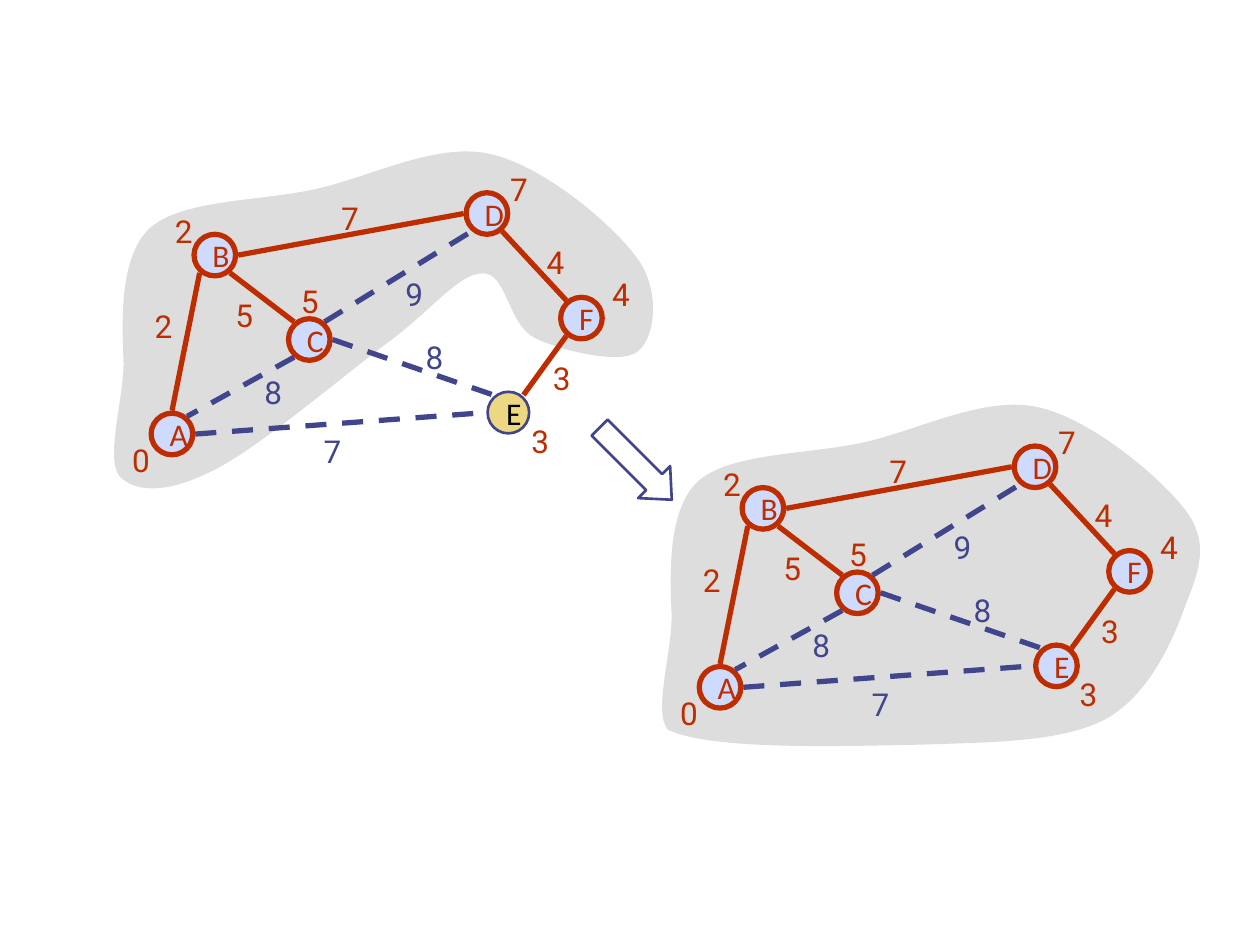
from pptx import Presentation
from pptx.dml.color import RGBColor
from pptx.enum.dml import MSO_LINE
from pptx.enum.shapes import MSO_CONNECTOR, MSO_SHAPE
from pptx.enum.text import MSO_ANCHOR, MSO_AUTO_SIZE, PP_ALIGN
from pptx.oxml.ns import qn
from pptx.util import Inches, Pt
from lxml import etree

OVAL, ARROW = MSO_SHAPE.OVAL, MSO_SHAPE.RIGHT_ARROW
STRAIGHT = MSO_CONNECTOR.STRAIGHT
DASH = MSO_LINE.DASH
MIDDLE, LEFT = MSO_ANCHOR.MIDDLE, PP_ALIGN.LEFT
FIT_SHAPE = MSO_AUTO_SIZE.SHAPE_TO_FIT_TEXT

RED, INDIGO, BLACK = "BE2D00", "40458C", "000000"
PALE_BLUE, YELLOW, GRAY = "CFDBFD", "ECD882", "DDDDDD"

SIZE = 0.33                       # node diameter
SIDE, DIAG_X, DIAG_Y = 0.185, 0.12, 0.14   # where edges meet a node
LABEL_W, LABEL_H = 0.34, 0.4
STEP = (4.35, 2.01)               # from the first graph to the second

# node: left, top, distance, left and top of the distance label
NODES = {
    "B": (1.54, 1.86, "2", 1.29, 1.63),
    "D": (3.70, 1.53, "7", 3.95, 1.30),
    "C": (2.29, 2.53, "5", 2.29, 2.19),
    "A": (1.20, 3.28, "0", 0.95, 3.45),
    "F": (4.45, 2.36, "4", 4.76, 2.13),
    "E": (3.87, 3.11, "3", 4.12, 3.30),
}
# edge: node and side, node and side, chosen, weight, label left and top
EDGES = [
    ("B", "SE", "C", "NW", True, "5", 1.77, 2.30),
    ("C", "SW", "A", "NE", False, "8", 2.00, 2.91),
    ("B", "SW", "A", "N", True, "2", 1.13, 2.39),
    ("C", "E", "E", "NW", False, "8", 3.28, 2.63),
    ("A", "E", "E", "W", False, "7", 2.47, 3.38),
    ("B", "E", "D", "W", True, "7", 2.61, 1.53),
    ("C", "NE", "D", "SW", False, "9", 3.12, 2.13),
    ("F", "NW", "D", "SE", True, "4", 4.24, 1.88),
    ("E", "NE", "F", "SW", True, "3", 4.29, 2.80),
]
# cloud outlines: three points for each curve
CLOUD_LEFT = [(0.98, 2.86), (0.99, 3.14), (0.83, 3.64), (0.95, 3.78)]
CLOUD_TOP = [
    (4.86, 1.78), (4.31, 1.31), (3.88, 1.22),
    (3.46, 1.13), (2.95, 1.40), (2.51, 1.50),
    (2.06, 1.60), (1.45, 1.58), (1.19, 1.81),
    (0.94, 2.04), (0.97, 2.58), (0.98, 2.86),
]
WITHOUT_E = [
    (1.08, 3.92), (1.35, 3.91), (1.70, 3.73),
    (2.06, 3.55), (2.74, 2.97), (3.09, 2.71),
    (3.44, 2.45), (3.64, 2.17), (3.83, 2.17),
    (4.02, 2.16), (4.03, 2.57), (4.24, 2.68),
    (4.44, 2.78), (4.93, 2.90), (5.06, 2.79),
    (5.20, 2.69), (5.25, 2.30), (5.05, 2.04),
]
WITH_E = [
    (1.29, 3.95), (2.39, 3.91), (2.96, 3.90),
    (3.54, 3.88), (4.07, 3.88), (4.42, 3.70),
    (4.77, 3.51), (4.96, 3.07), (5.06, 2.79),
    (5.17, 2.51), (5.25, 2.30), (5.06, 2.04),
]


def rgb(color):
    return RGBColor.from_string(color)


def shift(x, y, offset):
    return Inches(x + offset[0]), Inches(y + offset[1])


def add_text(sp, text, *, font, color, size=18):
    tf = sp.text_frame
    tf.word_wrap = False
    p = tf.paragraphs[0]
    p.alignment = LEFT
    r = p.add_run()
    r.text = text
    r.font.name, r.font.size = font, Pt(size)
    r.font.color.rgb = rgb(color)
    return tf


def set_line(sp, color, width):
    sp.line.color.rgb = rgb(color)
    sp.line.width = Pt(width)


def add_cloud(shapes, points, offset):
    start, *rest = [shift(x, y, offset) for x, y in points]
    builder = shapes.build_freeform(*start, scale=1.0)
    builder.add_line_segments(rest, close=True)
    sp = builder.convert_to_shape()
    sp.shadow.inherit = False
    sp.fill.solid()
    sp.fill.fore_color.rgb = rgb(GRAY)
    sp.line.fill.background()
    # Join every three segments into one Bézier curve
    segments = list(sp._element.iter(qn("a:lnTo")))
    for i in range(0, len(segments), 3):
        curve = etree.Element(qn("a:cubicBezTo"))
        segments[i].addprevious(curve)
        for segment in segments[i:i + 3]:
            curve.append(segment[0])
            segment.getparent().remove(segment)


def add_node(shapes, name, offset, pending):
    fill, line, width, color = (
        (YELLOW, INDIGO, 1.5, BLACK) if pending else (PALE_BLUE, RED, 3, RED))
    left, top = NODES[name][:2]
    sp = shapes.add_shape(OVAL, *shift(left, top, offset), Inches(SIZE), Inches(SIZE))
    sp.shadow.inherit = False
    sp.fill.solid()
    sp.fill.fore_color.rgb = rgb(fill)
    set_line(sp, line, width)
    add_text(sp, name, font="Calibri", color=color).vertical_anchor = MIDDLE


def anchor(name, side, offset):
    left, top = NODES[name][:2]
    dx, dy = (DIAG_X, DIAG_Y) if len(side) == 2 else (SIDE, SIDE)
    x = left + SIZE / 2 + dx * (("E" in side) - ("W" in side))
    y = top + SIZE / 2 + dy * (("S" in side) - ("N" in side))
    return shift(x, y, offset)


def add_edge(shapes, start, end, color, dashed):
    line = shapes.add_connector(STRAIGHT, *start, *end)
    set_line(line, color, 3)
    if dashed:
        line.line.dash_style = DASH
    etree.SubElement(line._element.spPr, qn("a:effectLst"))


def add_label(shapes, text, x, y, offset, color):
    sp = shapes.add_textbox(*shift(x, y, offset), Inches(LABEL_W), Inches(LABEL_H))
    add_text(sp, text, font="Roboto", color=color).auto_size = FIT_SHAPE


def add_graph(slide, offset, cloud, pending=""):
    shapes = slide.shapes.add_group_shape().shapes
    add_cloud(shapes, CLOUD_LEFT + cloud + CLOUD_TOP, offset)
    for name in NODES:
        add_node(shapes, name, offset, name == pending)
    for a, a_side, b, b_side, chosen, weight, x, y in EDGES:
        color = RED if chosen else INDIGO
        add_edge(shapes, anchor(a, a_side, offset), anchor(b, b_side, offset),
                 color, not chosen)
        add_label(shapes, weight, x, y, offset, color)
    for _, _, distance, x, y in NODES.values():
        add_label(shapes, distance, x, y, offset, RED)


def add_step_arrow(slide):
    sp = slide.shapes.add_shape(ARROW, Inches(4.64), Inches(3.5), Inches(0.81), Inches(0.36))
    sp.adjustments[0], sp.adjustments[1] = 0.5, 0.55
    sp.rotation = 45
    sp.shadow.inherit = False
    sp.fill.background()
    set_line(sp, INDIGO, 1.5)


def main():
    prs = Presentation()
    prs.slide_width, prs.slide_height = Inches(10), Inches(7.5)
    slide = prs.slides.add_slide(prs.slide_layouts[6])
    # Before and after E joins the cloud
    add_graph(slide, (0, 0), WITHOUT_E, pending="E")
    add_graph(slide, STEP, WITH_E)
    add_step_arrow(slide)
    prs.save("out.pptx")


if __name__ == "__main__":
    main()
